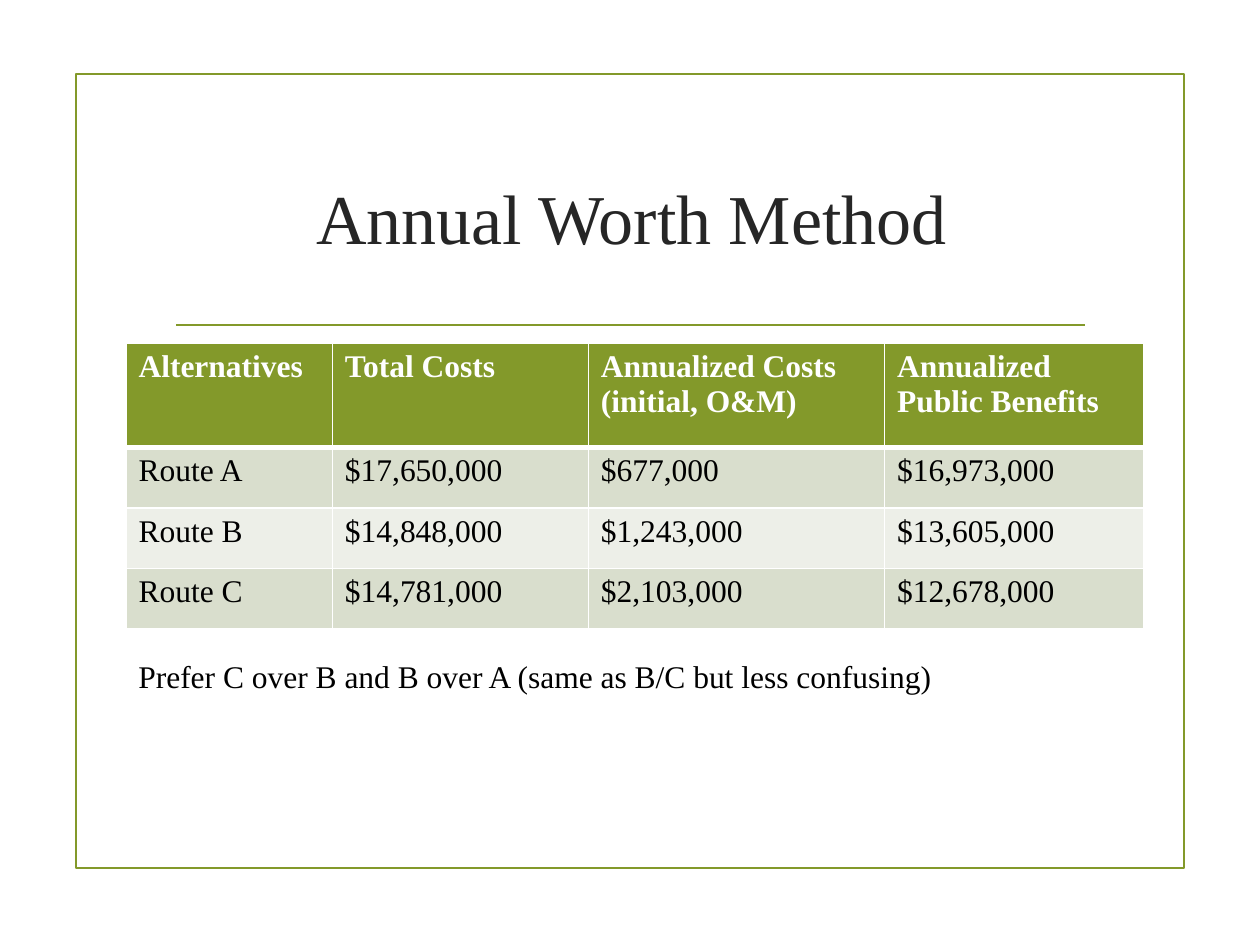
from lxml import etree
from pptx import Presentation
from pptx import util as u
from pptx.dml.color import RGBColor
from pptx.enum import shapes, text
from pptx.oxml.ns import qn

TITLE = "Annual Worth Method"
ROWS = [
    ("Alternatives", "Total Costs", "Annualized Costs (initial, O&M)", "Annualized Public Benefits"),
    ("Route A", "$17,650,000", "$677,000", "$16,973,000"),
    ("Route B", "$14,848,000", "$1,243,000", "$13,605,000"),
    ("Route C", "$14,781,000", "$2,103,000", "$12,678,000"),
]
NOTE = "Prefer C over B and B over A (same as B/C but less confusing)"

THEME = dict(
    font="Times New Roman", title_size=40, body_size=18, line=1.25,
    accent="83992A", title="262626", body="000000", white="FFFFFF",
    bands=("D9DECD", "EDEFE8"),
)
COL_WIDTHS = (4.16, 5.16, 5.97, 5.23)
HEADER_HEIGHT, ROW_HEIGHT = 2.11, 1.22
LEFT, TABLE_TOP = 2.54, 6.91


def rgb(name):
    return RGBColor.from_string(THEME.get(name, name))


def style_text(tf, size, color, bold=False):
    for r in tf.paragraphs[0].runs:
        r.font.name = THEME["font"]
        r.font.size = u.Pt(size)
        r.font.bold = bold
        r.font.color.rgb = rgb(color)


def style_line(sp):
    sp.line.color.rgb = rgb("accent")
    sp.line.width = u.Pt(THEME["line"])


def add_text(s, box, content, size, color):
    tf = s.shapes.add_textbox(*map(u.Cm, box)).text_frame
    tf.word_wrap = True
    tf.text = content
    style_text(tf, size, color)
    return tf


def add_borders(cell, widths):
    """Draw white cell borders; widths maps a side (L, R, T, B) to points."""
    tcPr = cell._tc.get_or_add_tcPr()
    for side, width in widths.items():
        ln = etree.SubElement(tcPr, qn(f"a:ln{side}"), w=str(u.Pt(width)))
        fill = etree.SubElement(ln, qn("a:solidFill"))
        etree.SubElement(fill, qn("a:srgbClr"), val=THEME["white"])


def add_frame(s):
    sp = s.shapes.add_shape(shapes.MSO_SHAPE.RECTANGLE, *map(u.Cm, (1.54, 1.5, 22.33, 16)))
    sp.shadow.inherit = False
    sp.fill.background()
    style_line(sp)
    rule = s.shapes.add_connector(
        shapes.MSO_CONNECTOR.STRAIGHT, *map(u.Cm, (3.55, 6.55, 21.87, 6.55)))
    etree.SubElement(rule._element.spPr, qn("a:effectLst"))
    style_line(rule)


def add_costs_table(s):
    heights = [HEADER_HEIGHT] + [ROW_HEIGHT] * (len(ROWS) - 1)
    size = sum(COL_WIDTHS), sum(heights)
    table = s.shapes.add_table(
        len(ROWS), len(COL_WIDTHS), *map(u.Cm, (LEFT, TABLE_TOP, *size))).table
    for col, width in zip(table.columns, COL_WIDTHS):
        col.width = u.Cm(width)
    for i, (row, height, values) in enumerate(zip(table.rows, heights, ROWS)):
        row.height = u.Cm(height)
        header = i == 0
        for cell, value in zip(row.cells, values):
            add_borders(cell, dict(L=1, R=1, T=3 if i == 1 else 1, B=3 if header else 1))
            cell.fill.solid()
            cell.fill.fore_color.rgb = rgb("accent" if header else THEME["bands"][(i - 1) % 2])
            cell.text_frame.text = value
            style_text(cell.text_frame, THEME["body_size"], "white" if header else "body", header)


def main():
    prs = Presentation()
    prs.slide_width, prs.slide_height = u.Cm(25.4), u.Cm(19.05)
    s = prs.slides.add_slide(prs.slide_layouts[6])
    add_frame(s)
    tf = add_text(s, (3.28, 2.54, 18.9, 3.63), TITLE, THEME["title_size"], "title")
    tf.vertical_anchor = text.MSO_ANCHOR.MIDDLE
    tf.paragraphs[0].alignment = text.PP_ALIGN.CENTER
    add_costs_table(s)
    tf = add_text(s, (LEFT, 13.13, 19.61, 1.02), NOTE, THEME["body_size"], "body")
    tf.auto_size = text.MSO_AUTO_SIZE.SHAPE_TO_FIT_TEXT
    prs.save("out.pptx")


if __name__ == "__main__":
    main()
